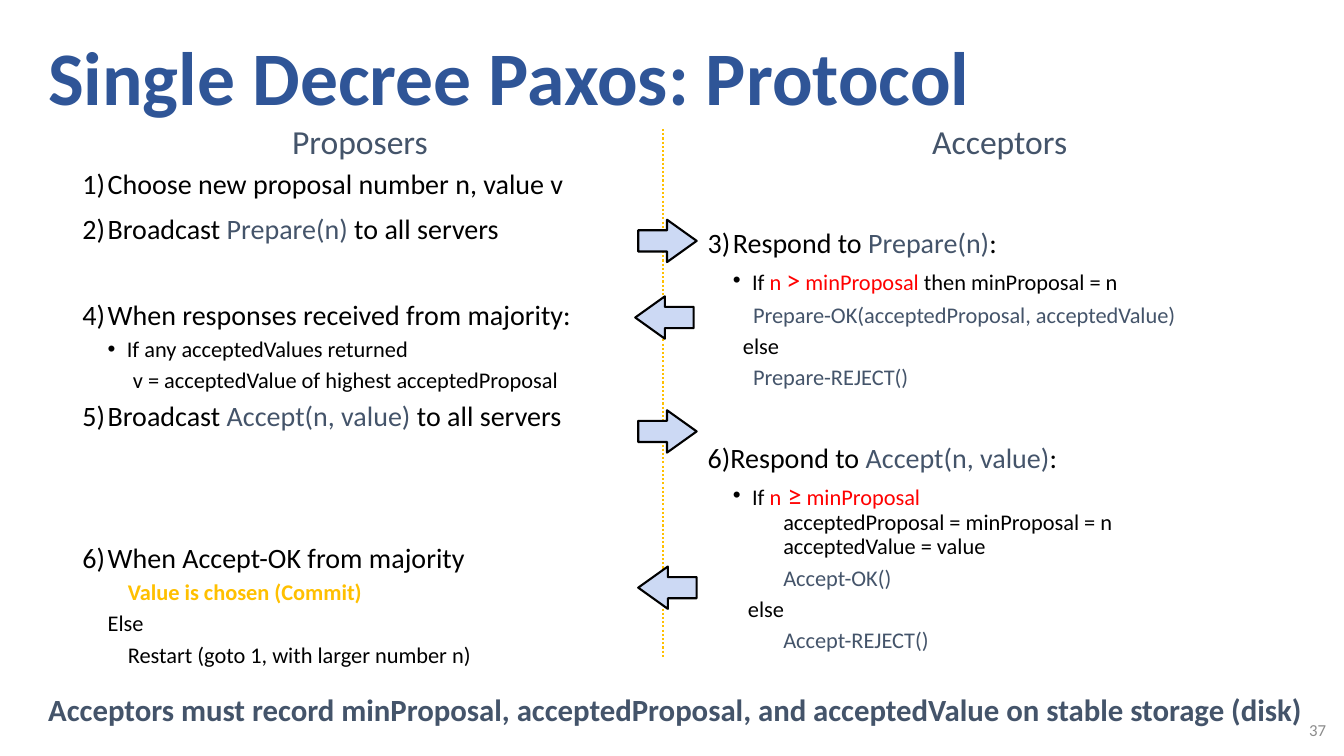
from lxml import etree
from pptx import Presentation
from pptx.dml.color import RGBColor
from pptx.enum.dml import MSO_LINE
from pptx.enum.shapes import MSO_CONNECTOR, MSO_SHAPE
from pptx.enum.text import MSO_ANCHOR, PP_ALIGN
from pptx.oxml.ns import qn
from pptx.util import Inches, Pt

LEFT, CENTER, RIGHT = PP_ALIGN.LEFT, PP_ALIGN.CENTER, PP_ALIGN.RIGHT
TOP, MIDDLE = MSO_ANCHOR.TOP, MSO_ANCHOR.MIDDLE
RIGHT_ARROW, LEFT_ARROW = MSO_SHAPE.RIGHT_ARROW, MSO_SHAPE.LEFT_ARROW

BLACK = RGBColor(0x00, 0x00, 0x00)
WHITE = RGBColor(0xFF, 0xFF, 0xFF)
TITLE_BLUE = RGBColor(0x2F, 0x55, 0x97)
SLATE = RGBColor(0x44, 0x54, 0x6A)
RED = RGBColor(0xFF, 0x00, 0x00)
GOLD = RGBColor(0xFF, 0xC0, 0x00)
ARROW_BLUE = RGBColor(0xCC, 0xD9, 0xF4)
GRAY = RGBColor(0x8C, 0x8C, 0x8C)
FONT = "Calibri"


def set_font(font, size, color, bold=False):
    font.name, font.size, font.bold = FONT, Pt(size), bold
    font.color.rgb = color


def add_frame(slide, box, anchor=TOP):
    frame = slide.shapes.add_textbox(*map(Inches, box)).text_frame
    frame.word_wrap = True
    frame.vertical_anchor = anchor
    return frame


def add_label(slide, box, text, size, color, bold=False, align=LEFT):
    label = add_frame(slide, box, MIDDLE).paragraphs[0]
    label.text, label.alignment = text, align
    set_font(label.font, size, color, bold)


def add_marker(paragraph, margin, hanging, tag=None, **attributes):
    """Indent a paragraph and give it a number or bullet, if any."""
    properties = paragraph._p.get_or_add_pPr()
    properties.set("marL", str(Inches(margin)))
    properties.set("indent", str(-Inches(hanging)))
    if tag == "a:buChar":
        etree.SubElement(properties, qn("a:buFont"), typeface="Arial")
    etree.SubElement(properties, qn(tag or "a:buNone"), **attributes)


def add_runs(paragraph, runs, size, color, bold=False):
    """Each run is a text, or a tuple of text, colour and optional size."""
    set_font(paragraph.font, size, color, bold)
    for part in runs:
        text, *style = (part,) if isinstance(part, str) else part
        run = paragraph.add_run()
        run.text = text
        if style:
            run.font.color.rgb = style[0]
        if len(style) > 1:
            run.font.size = Pt(style[1])


def add_line(frame, before):
    paragraph = frame.add_paragraph()
    paragraph.line_spacing = 0.9
    paragraph.space_before = Pt(before)
    return paragraph


def add_step(frame, start, runs, before, hanging=0.25):
    step = add_line(frame, before)
    add_marker(step, hanging, hanging, "a:buAutoNum",
               type="arabicParenR", startAt=str(start))
    add_runs(step, runs, 20, BLACK)


def add_condition(frame, runs):
    condition = add_line(frame, 5)
    add_marker(condition, 0.44, 0.19, "a:buChar", char="•")
    add_runs(condition, runs, 16, BLACK)


def add_detail(frame, text, margin, color=BLACK, bold=False, before=5):
    detail = add_line(frame, before)
    add_marker(detail, margin, 0)
    add_runs(detail, [text], 16, color, bold)


def add_column(slide, box, heading, after=0):
    frame = add_frame(slide, box)
    title = frame.paragraphs[0]
    title.text, title.alignment = heading, CENTER
    title.line_spacing = 0.9
    title.space_after = Pt(after)
    set_font(title.font, 24, SLATE)
    return frame


def add_proposers(slide, box):
    column = add_column(slide, box, "Proposers")
    # Prepare phase
    add_step(column, 1, ["Choose new proposal number n, value v"], 6)
    add_step(column, 1, ["Broadcast ", ("Prepare(n)", SLATE),
                         " to all servers"], 10)
    add_step(column, 4, ["When responses received from majority:"], 40)
    add_condition(column, ["If any acceptedValues returned"])
    add_detail(column, "v = acceptedValue of highest acceptedProposal", 0.5)
    # Accept phase
    add_step(column, 5, ["Broadcast ", ("Accept(n, value) ", SLATE),
                         "to all servers"], 6)
    add_step(column, 6, ["When Accept-OK from majority"], 80)
    add_detail(column, "Value is chosen (Commit)", 0.45, GOLD, True)
    add_detail(column, "Else", 0.25)
    add_detail(column, "Restart (goto 1, with larger number n)", 0.45)


def add_acceptors(slide, box):
    column = add_column(slide, box, "Acceptors", after=12)
    # Reply to Prepare
    add_step(column, 3, ["Respond to ", ("Prepare(n)", SLATE), ":"], 36)
    add_condition(column, ["If ", ("n ", RED), (">", RED, 20),
                           (" minProposal ", RED), "then minProposal = n"])
    add_detail(column, "Prepare-OK(acceptedProposal, acceptedValue)",
               0.45, SLATE)
    add_detail(column, "else", 0.35)
    add_detail(column, "Prepare-REJECT()", 0.45, SLATE)
    # Reply to Accept
    add_step(column, 6, ["Respond to ", ("Accept(n, value)", SLATE), ":"],
             38.4, hanging=0.22)
    add_condition(column, ["If", (" n", RED), (" ≥", RED, 20),
                           (" minProposal", RED)])
    for assignment in ("acceptedProposal = minProposal = n",
                       "acceptedValue = value"):
        add_detail(column, assignment, 0.75, before=0)
    add_detail(column, "Accept-OK()", 0.75, SLATE)
    add_detail(column, "else", 0.4)
    add_detail(column, "Accept-REJECT()", 0.75, SLATE)


def add_divider(slide, x, top, bottom):
    divider = slide.shapes.add_connector(
        MSO_CONNECTOR.STRAIGHT, *map(Inches, (x, top, x, bottom)))
    divider.line.color.rgb = GOLD
    divider.line.width = Pt(1.5)
    divider.line.dash_style = MSO_LINE.ROUND_DOT
    etree.SubElement(divider._element.spPr, qn("a:effectLst"))


def add_message_arrow(slide, direction, left, top):
    arrow = slide.shapes.add_shape(
        direction, *map(Inches, (left, top, 0.58, 0.42)))
    arrow.adjustments[1] = 0.7
    arrow.shadow.inherit = False
    arrow.fill.solid()
    arrow.fill.fore_color.rgb = ARROW_BLUE
    arrow.line.color.rgb = BLACK
    arrow.line.width = Pt(1.5)


def add_storage_note(slide, box):
    note = slide.shapes.add_shape(MSO_SHAPE.RECTANGLE, *map(Inches, box))
    note.shadow.inherit = False
    note.fill.solid()
    note.fill.fore_color.rgb = WHITE
    note.line.fill.background()
    note.text_frame.word_wrap = True
    sentence = note.text_frame.paragraphs[0]
    sentence.text = ("Acceptors must record minProposal, acceptedProposal, "
                     "and acceptedValue on stable storage (disk)")
    sentence.alignment = LEFT
    set_font(sentence.font, 22, SLATE, True)


def main():
    deck = Presentation()
    deck.slide_width, deck.slide_height = Inches(13.33), Inches(7.5)
    slide = deck.slides.add_slide(deck.slide_layouts[6])

    add_divider(slide, 6.58, 1.28, 6.53)
    add_label(slide, (0.38, 0.1, 12.53, 1.29),
              "Single Decree Paxos: Protocol", 54, TITLE_BLUE, bold=True)
    add_acceptors(slide, (6.92, 1.2, 5.99, 6))
    # Messages between the two roles
    for direction, left, top in ((RIGHT_ARROW, 6.33, 2.18),
                                 (LEFT_ARROW, 6.3, 2.94),
                                 (RIGHT_ARROW, 6.33, 4.07),
                                 (LEFT_ARROW, 6.33, 5.62)):
        add_message_arrow(slide, direction, left, top)
    add_storage_note(slide, (0.38, 6.8, 12.78, 0.47))
    add_proposers(slide, (0.72, 1.2, 5.7, 5.67))
    add_label(slide, (12.74, 7.04, 0.51, 0.4), "37", 12, GRAY, align=RIGHT)
    deck.save("out.pptx")


if __name__ == "__main__":
    main()
